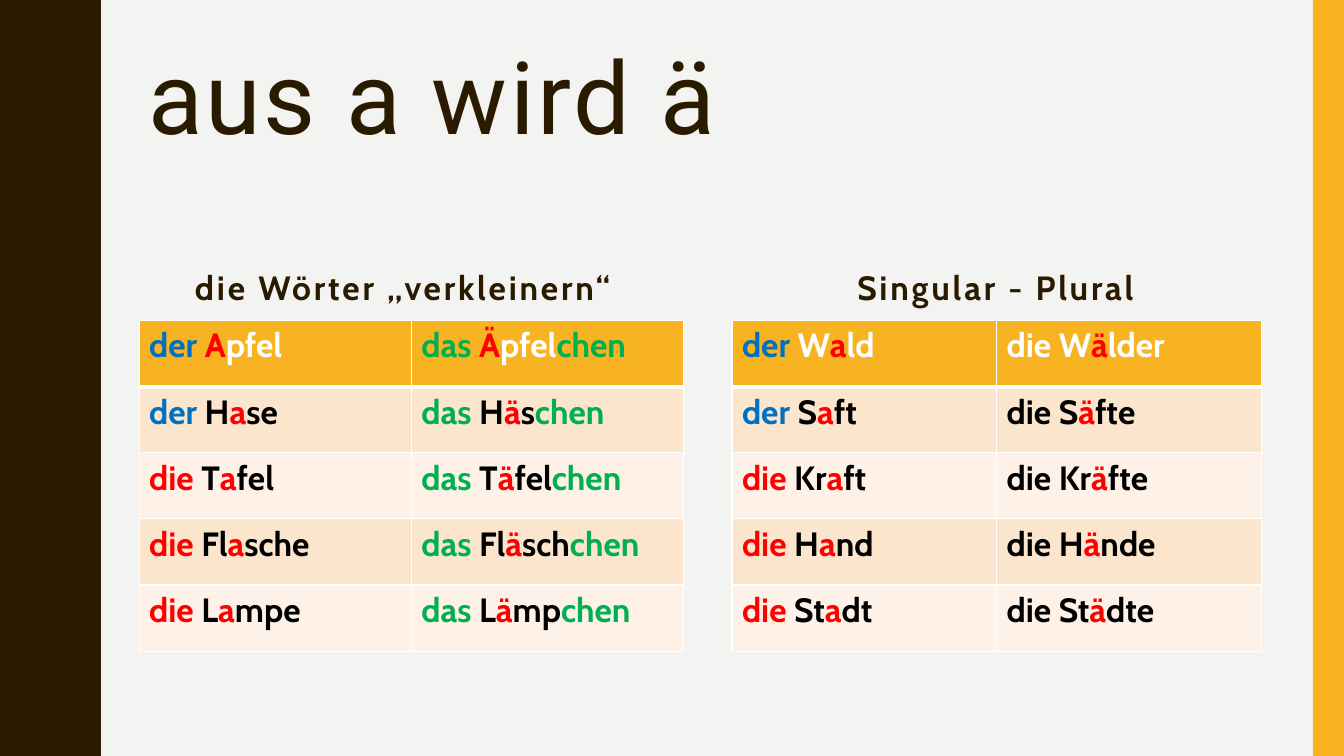
from lxml import etree
from pptx import Presentation, util as u
from pptx.dml.color import RGBColor
from pptx.enum import shapes, text
from pptx.oxml.ns import qn

BROWN, GOLD, WHITE, BLACK = "2A1A00", "F8B323", "FFFFFF", "000000"
RED, BLUE, GREEN = "FF0000", "0070C0", "00B050"
BANDS = ["FEF2E8", "FCE5CD"]
GENUS = {"der": BLUE, "die": RED, "das": GREEN}


def paint(fmt, tone):
    """Fill a shape, cell or background with a hex colour."""
    fmt.solid()
    fmt.fore_color.rgb = RGBColor.from_string(tone)


def label(left, top, wide, high, words, size, face):
    """Add a text box with spaced brown letters."""
    box = slide.shapes.add_textbox(*map(u.Inches, (left, top, wide, high)))
    frame = box.text_frame
    frame.word_wrap = True
    para = frame.paragraphs[0]
    run = para.add_run()
    run.text = words
    run._r.get_or_add_rPr().set("spc", "200")
    para.font.size = u.Pt(size)
    para.font.name = face
    para.font.color.rgb = RGBColor.from_string(BROWN)
    return frame, para


deck = Presentation()
deck.slide_width, deck.slide_height = u.Inches(13.33), u.Inches(7.5)
slide = deck.slides.add_slide(deck.slide_layouts[6])
paint(slide.background.fill, "F3F3F2")

# Wavy left edge: one half wave, run forth and back five times
half = [(0.78, 0), (0.78, 0.07), (0.79, 0.14), (0.8, 0.2), (0.81, 0.25),
        (0.83, 0.29), (0.85, 0.33), (0.87, 0.38), (0.89, 0.42), (0.91, 0.46),
        (0.93, 0.5), (0.95, 0.55), (0.96, 0.61), (0.97, 0.68), (0.97, 0.75)]
back = [(x, 1.5 - y) for x, y in reversed(half)]
edge = [(x, y + 1.5 * n) for n in range(5) for x, y in half + back[1:]]
pen = slide.shapes.build_freeform(0, 0, scale=u.Inches(1))
pen.add_line_segments(edge + [(0, 7.5)], close=True)
wave = pen.convert_to_shape()

# Gold right edge
bar = slide.shapes.add_shape(shapes.MSO_SHAPE.RECTANGLE, u.Inches(13.02), 0,
                             u.Inches(0.31), deck.slide_height)
for side, tone in (wave, BROWN), (bar, GOLD):
    side.shadow.inherit = False
    paint(side.fill, tone)
    side.line.fill.background()

# Title
frame, para = label(1.37, 0.42, 11.12, 1.63, "aus a wird ä", 72, "Roboto")
para.line_spacing = 0.9

# Word lists: article | start | vowel | rest | ending
small = [("der| |A|pfel", "das| |Ä|pfel|chen"),
         ("der| H|a|se", "das| H|ä|s|chen"),
         ("die| T|a|fel", "das| T|ä|fel|chen"),
         ("die| Fl|a|sche", "das| Fl|ä|sch|chen"),
         ("die| L|a|mpe", "das| L|ä|mp|chen")]
plural = [("der| W|a|ld", "die| W|ä|lder"),
          ("der| S|a|ft", "die| S|ä|fte"),
          ("die| Kr|a|ft", "die| Kr|ä|fte"),
          ("die| H|a|nd", "die| H|ä|nde"),
          ("die| St|a|dt", "die| St|ä|dte")]

for left, wide, head, words in ((1.37, 5.4, "die Wörter „verkleinern“", small),
                                (7.25, 5.25, "Singular - Plural", plural)):
    # Heading
    frame, para = label(left, 2.41, 5.25, 0.69, head, 24, "Cabin")
    frame.vertical_anchor = text.MSO_ANCHOR.BOTTOM
    para.alignment = text.PP_ALIGN.CENTER
    para.font.bold = True

    # Table
    grid = slide.shapes.add_table(
        len(words), 2, u.Inches(left + 0.01), u.Inches(3.18),
        u.Inches(wide), u.Inches(0.656 * len(words))).table
    for r, pair in enumerate(words):
        base = BLACK if r else WHITE
        for c, entry in enumerate(pair):
            cell = grid.cell(r, c)

            # Borders, with a thick rule below the first row
            props = cell._tc.get_or_add_tcPr()
            for tag in "lnL", "lnR", "lnT", "lnB":
                thick = (r, tag) in ((0, "lnB"), (1, "lnT"))
                rule = etree.SubElement(props, qn("a:" + tag),
                                        w=str(u.Pt(3 if thick else 1)))
                ink = etree.SubElement(rule, qn("a:solidFill"))
                etree.SubElement(ink, qn("a:srgbClr"), val=WHITE)
            paint(cell.fill, BANDS[r % 2] if r else GOLD)

            # Coloured word parts
            para = cell.text_frame.paragraphs[0]
            para.font.size, para.font.name = u.Pt(24), "Cabin"
            para.font.bold = True
            parts = entry.split("|")
            many = c == 1 and parts[0] == "die"
            first = base if many else GENUS[parts[0]]
            for part, tone in zip(parts, (first, base, RED, base, GREEN)):
                run = para.add_run()
                run.text = part
                run.font.color.rgb = RGBColor.from_string(tone)

deck.save("out.pptx")
